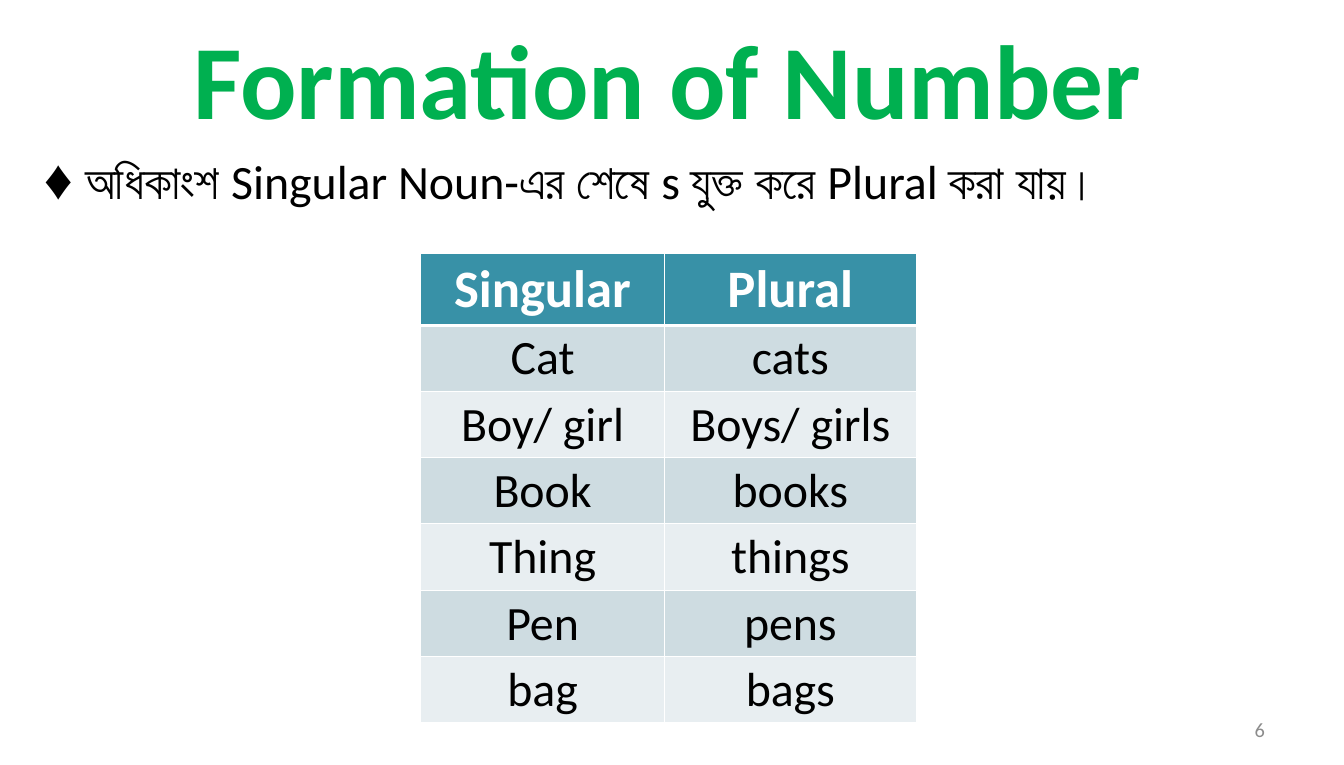
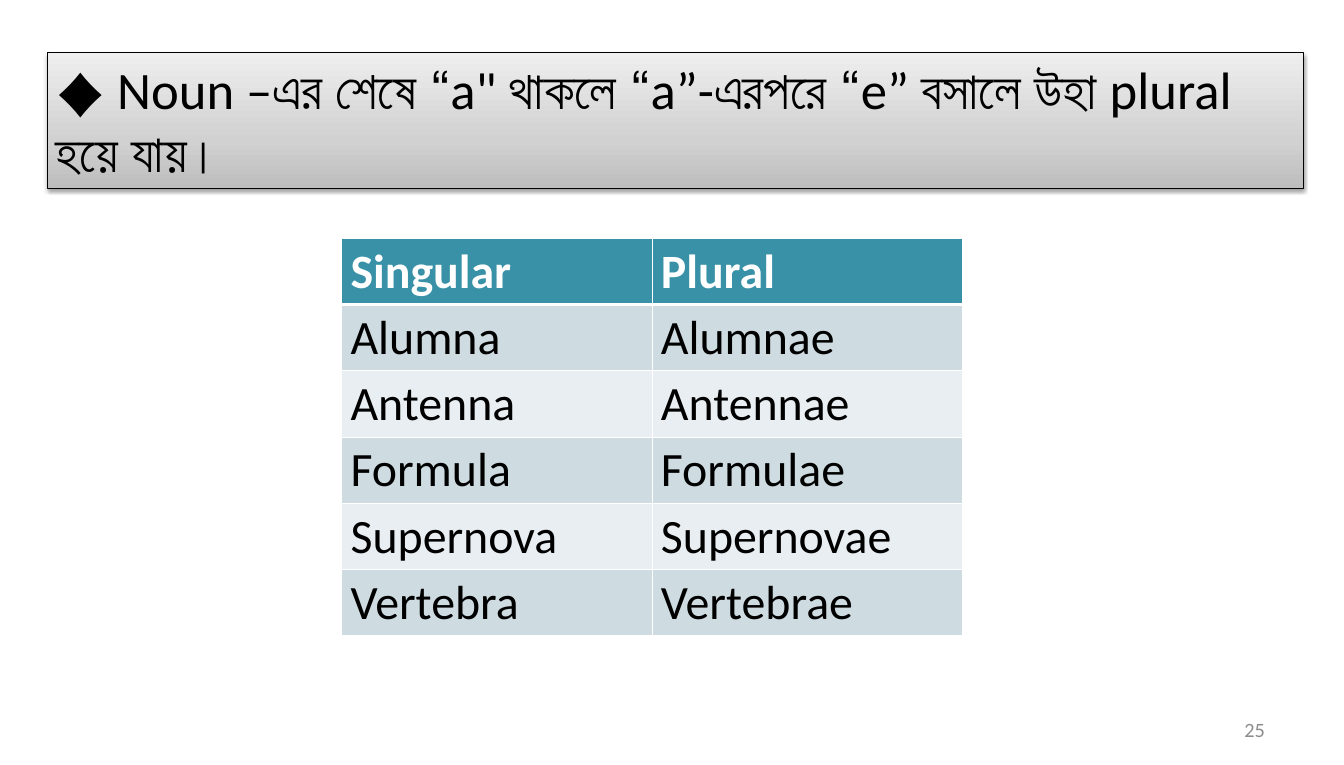
"""Build two grammar slides on forming plural nouns."""
import lxml.etree
import pptx
import pptx.dml.color
import pptx.enum.shapes
import pptx.enum.text
import pptx.oxml
import pptx.oxml.ns
import pptx.util

Cm, Pt = pptx.util.Cm, pptx.util.Pt
ALIGN = pptx.enum.text.PP_ALIGN
ANCHOR = pptx.enum.text.MSO_ANCHOR

COLORS = {
    "title": "00B050",
    "text": "000000",
    "header": "3891A7",
    "band_dark": "CEDCE1",
    "band_light": "E8EEF1",
    "white": "FFFFFF",
    "number": "8C8C8C",
}
RULE_GRADIENT = ((0, "BDBDBD"), (35, "D1D1D1"), (100, "EEEEEE"))
FONT, BULLET_FONT = "Calibri", "League Spartan"
SLIDE_SIZE = (39.62, 22.56)
NUMBER_BOX = (28.4, 20.9, 9.25, 1.2)

REGULAR_NOUNS = [
    ("Singular", "Plural"),
    ("Cat", "cats"),
    ("Boy/ girl", "Boys/ girls"),
    ("Book", "books"),
    ("Thing", "things"),
    ("Pen", "pens"),
    ("bag", "bags"),
]
LATIN_NOUNS = [
    ("Singular", "Plural"),
    ("Alumna", "Alumnae"),
    ("Antenna", "Antennae"),
    ("Formula", "Formulae"),
    ("Supernova", "Supernovae"),
    ("Vertebra", "Vertebrae"),
]


def rgb(name):
    """Return the named colour."""
    return pptx.dml.color.RGBColor.from_string(COLORS[name])


def add_text(frame, text, size, font=FONT, color="text", bold=False, align=ALIGN.LEFT):
    """Append a formatted run to the first paragraph of a text frame."""
    paragraph = frame.paragraphs[0]
    paragraph.alignment = align
    run = paragraph.add_run()
    run.text = text
    run.font.size = Pt(size)
    run.font.name = font
    run.font.bold = bold
    run.font.color.rgb = rgb(color)


def add_frame(slide, box, anchor=ANCHOR.TOP, inset=(0.25, 0.13)):
    """Add a wrapping text box and return its text frame."""
    frame = slide.shapes.add_textbox(*map(Cm, box)).text_frame
    frame.word_wrap = True
    frame.vertical_anchor = anchor
    frame.margin_left = frame.margin_right = Cm(inset[0])
    frame.margin_top = frame.margin_bottom = Cm(inset[1])
    return frame


def add_rule(frame, text, bullet_size, size):
    """Write a grammar rule after its diamond."""
    add_text(frame, "♦ ", bullet_size, font=BULLET_FONT)
    add_text(frame, text, size)


def add_number(slide, number):
    """Write the slide number at the lower right."""
    frame = add_frame(slide, NUMBER_BOX, ANCHOR.MIDDLE, (0.36, 0.18))
    add_text(frame, str(number), 17, color="number", align=ALIGN.RIGHT)


def set_borders(cell, top, bottom):
    """Draw white borders round a table cell, with widths in points."""
    properties = cell._tc.get_or_add_tcPr()
    for place, (side, width) in enumerate(zip("LRTB", (1, 1, top, bottom))):
        border = pptx.oxml.parse_xml(
            f'<a:ln{side} {pptx.oxml.ns.nsdecls("a")} w="{Pt(width)}"><a:solidFill>'
            f'<a:srgbClr val="{COLORS["white"]}"/></a:solidFill></a:ln{side}>'
        )
        properties.insert(place, border)


def add_noun_table(slide, box, nouns, widths, header_size, align):
    """Add a banded table of nouns whose rows share the height below the header."""
    left, top, height, header_height = box
    frame = slide.shapes.add_table(
        len(nouns), len(widths), Cm(left), Cm(top), Cm(sum(widths)), Cm(height)
    )
    table = frame.table
    for column, width in zip(table.columns, widths):
        column.width = Cm(width)
    body_height = (height - header_height) / (len(nouns) - 1)
    for row, pair in enumerate(nouns):
        is_header = row == 0
        table.rows[row].height = Cm(header_height if is_header else body_height)
        band = "header" if is_header else ("band_light", "band_dark")[row % 2]
        for column, noun in enumerate(pair):
            cell = table.cell(row, column)
            cell.fill.solid()
            cell.fill.fore_color.rgb = rgb(band)
            set_borders(cell, top=3 if row == 1 else 1, bottom=3 if is_header else 1)
            add_text(
                cell.text_frame,
                noun,
                header_size if is_header else 40,
                color="white" if is_header else "text",
                bold=is_header,
                align=align,
            )


def add_rule_panel(slide, box, text):
    """Add a shaded, shadowed panel that holds a grammar rule."""
    panel = slide.shapes.add_shape(
        pptx.enum.shapes.MSO_SHAPE.RECTANGLE, *map(Cm, box)
    )
    panel.shadow.inherit = False
    panel.line.color.rgb = rgb("text")
    panel.line.width = Pt(0.75)
    panel.fill.gradient()
    panel.fill.gradient_angle = 90
    properties = panel._element.spPr
    stops = properties.find(".//" + pptx.oxml.ns.qn("a:gsLst"))
    for stop in list(stops):
        stops.remove(stop)
    for position, color in RULE_GRADIENT:
        stops.append(pptx.oxml.parse_xml(
            f'<a:gs {pptx.oxml.ns.nsdecls("a")} pos="{position * 1000}">'
            f'<a:srgbClr val="{color}"/></a:gs>'
        ))
    effects = properties.find(pptx.oxml.ns.qn("a:effectLst"))
    effects.append(pptx.oxml.parse_xml(
        f'<a:outerShdw {pptx.oxml.ns.nsdecls("a")} blurRad="{Pt(3.1)}" '
        f'dist="{Pt(1.6)}" dir="5400000" rotWithShape="0">'
        f'<a:srgbClr val="{COLORS["text"]}"><a:alpha val="38000"/></a:srgbClr>'
        '</a:outerShdw>'
    ))
    frame = panel.text_frame
    frame.word_wrap = True
    frame.vertical_anchor = ANCHOR.TOP
    add_rule(frame, text, 41, 44)


def build_regular_slide(slide):
    """Build the slide on plurals formed with s."""
    title = add_frame(slide, (0.56, 0.28, 38.23, 4.06))
    add_text(title, "Formation of Number", 88, color="title", bold=True, align=ALIGN.CENTER)
    add_noun_table(slide, (12.4, 7.47, 13.8, 2.07), REGULAR_NOUNS, (7.19, 7.42), 44, ALIGN.CENTER)
    rule = add_frame(slide, (1.07, 4.34, 38.23, 2))
    add_rule(rule, "অধিকাংশ Singular Noun-এর শেষে s যুক্ত করে Plural করা যায়।", 40, 40)
    add_number(slide, 6)


def build_latin_slide(slide):
    """Build the slide on plurals formed with e after a."""
    add_rule_panel(
        slide,
        (1.4, 1.55, 37.03, 4.01),
        "Noun –এর শেষে “a\" থাকলে “a”-এরপরে “e” বসালে উহা plural হয়ে যায়।",
    )
    add_noun_table(slide, (10.08, 7.04, 11.7, 1.95), LATIN_NOUNS, (9.15, 9.15), 40, ALIGN.LEFT)
    add_number(slide, 25)


def main():
    """Create and save the presentation."""
    deck = pptx.Presentation()
    deck.slide_width, deck.slide_height = map(Cm, SLIDE_SIZE)
    for build in (build_regular_slide, build_latin_slide):
        build(deck.slides.add_slide(deck.slide_layouts[6]))
    deck.save("out.pptx")


if __name__ == "__main__":
    main()
